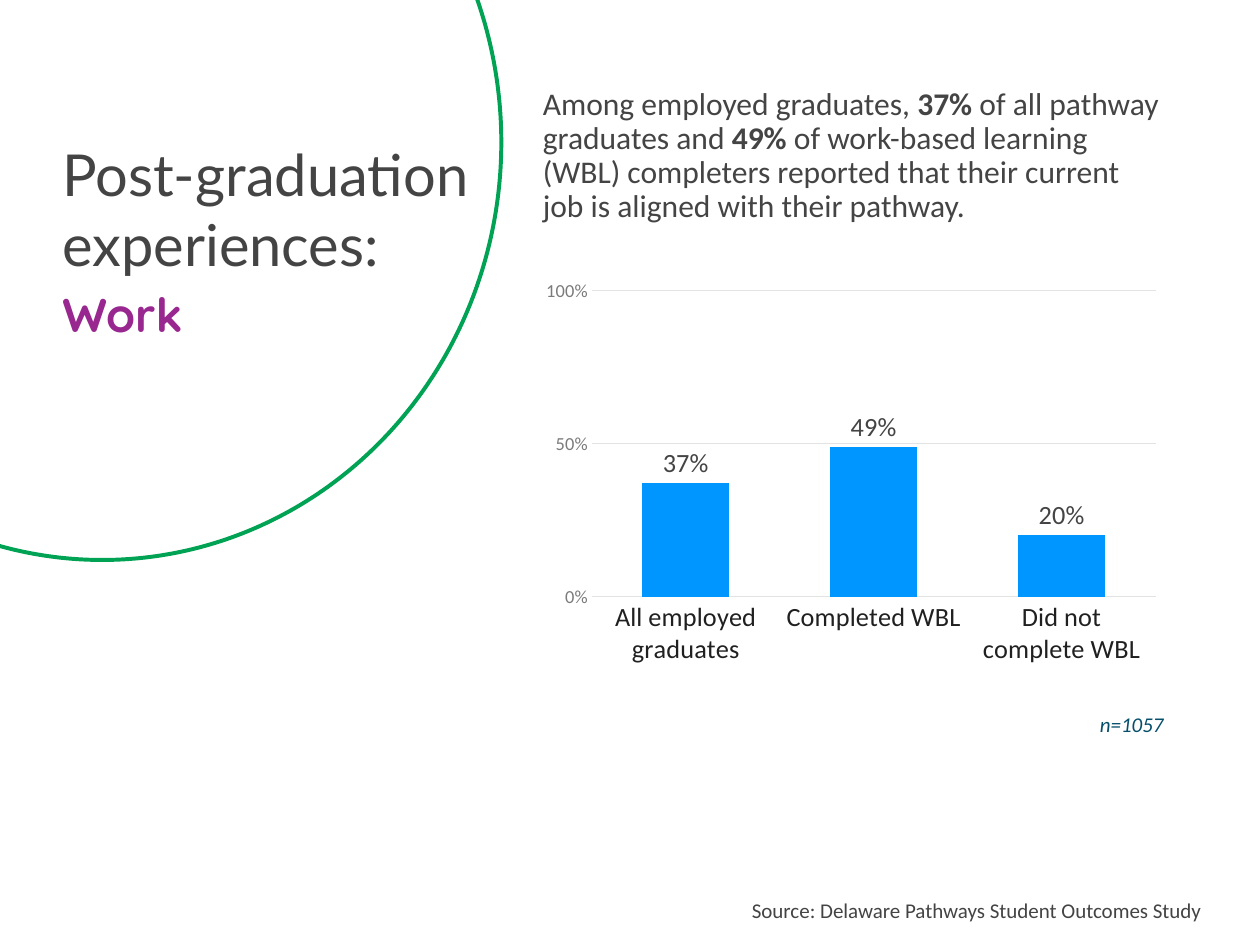
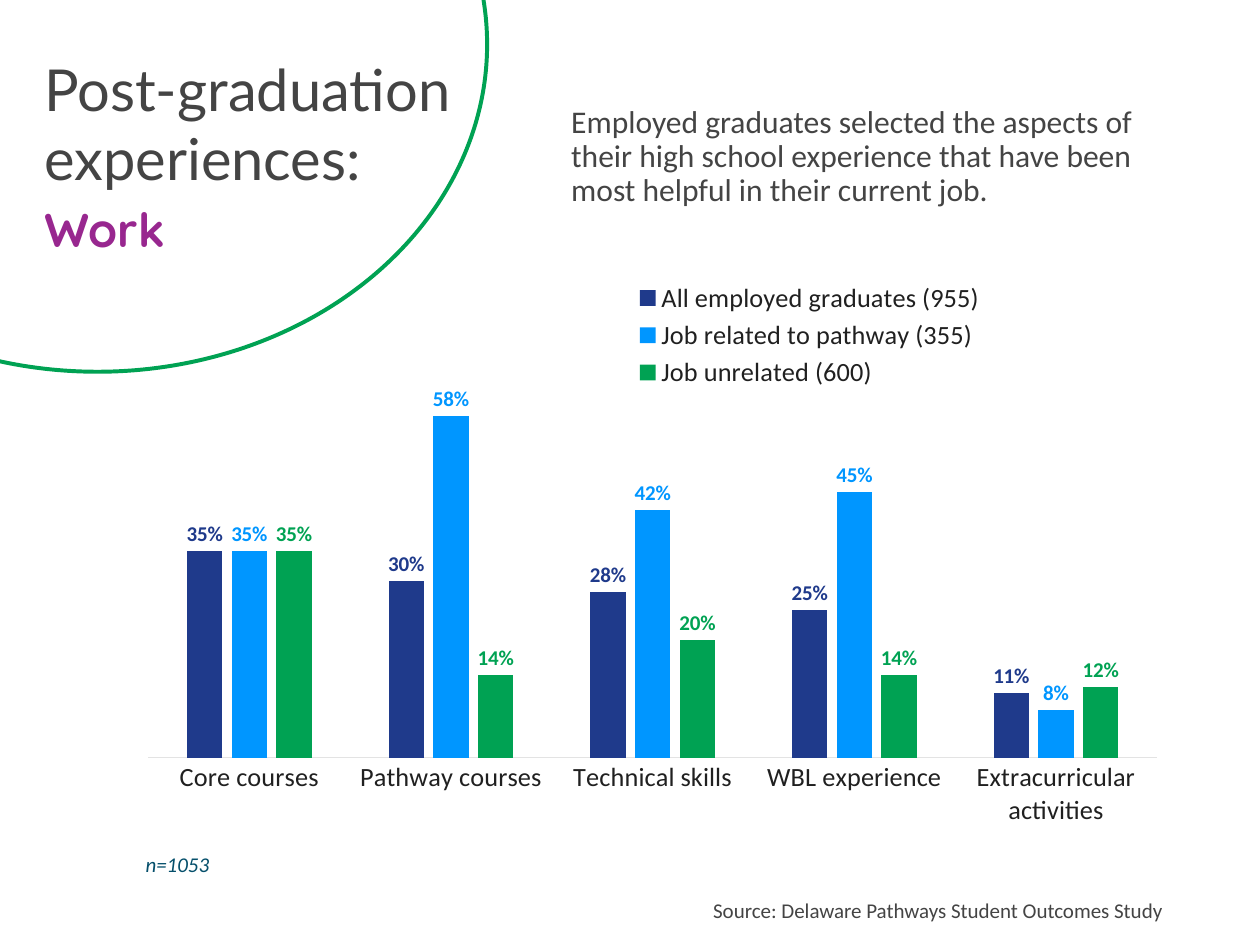
from dataclasses import dataclass
from typing import NamedTuple, Optional

from pptx import Presentation
from pptx.chart.data import CategoryChartData
from pptx.dml.color import RGBColor
from pptx.enum.chart import XL_CHART_TYPE as ChartType
from pptx.enum.chart import XL_LABEL_POSITION as LabelPos
from pptx.enum.chart import XL_LEGEND_POSITION as LegendPos
from pptx.enum.chart import XL_TICK_MARK as TickMark
from pptx.enum.shapes import MSO_SHAPE as Shape
from pptx.oxml import parse_xml
from pptx.oxml.ns import nsdecls
from pptx.util import Emu, Pt

# Shared look: 100 px to the inch
PX = 9144
INK, PURPLE, TEAL = "444444", "98278F", "054F6B"
NAVY, BLUE, GREEN = "1F3A8B", "0096FF", "00A253"
AXIS_TEXT, TICK_TEXT, RULE = "202020", "7B7B7B", "E3E3E3"
BODY, TITLE, ACCENT = "Calibri", "Lato", "Quicksand"
SOURCE = "Source: Delaware Pathways Student Outcomes Study"


class Box(NamedTuple):
    left: int
    top: int
    width: int
    height: int

    def emu(self) -> list[Emu]:
        return [Emu(side * PX) for side in self]


class Run(NamedTuple):
    text: str
    bold: bool = False


@dataclass
class Series:
    name: str
    values: list[float]
    color: str


@dataclass
class BarChart:
    box: Box
    categories: list[str]
    series: list[Series]
    gap: int
    maximum: float
    step: float
    label_size: int
    label_color: Optional[str] = None  # None: the colour of the series
    bold_labels: bool = False
    value_axis: bool = False
    plot: Optional[Box] = None  # measured from the chart's corner
    legend: Optional[Box] = None


@dataclass
class Page:
    circle: Box
    title: Box
    message: Box
    message_runs: list[Run]
    sample: Box
    sample_text: str
    source: Box
    chart: BarChart


def rgb(color: str) -> RGBColor:
    return RGBColor.from_string(color)


def style(font, size: int, color: str, name: str = BODY,
          bold: bool = False, italic: bool = False) -> None:
    font.name, font.size = name, Pt(size)
    font.bold, font.italic = bold, italic
    font.color.rgb = rgb(color)


def add_text(slide, box: Box):
    frame = slide.shapes.add_textbox(*box.emu()).text_frame
    frame.word_wrap = True
    return frame


def write(paragraph, text: str, *, size: int, color: str = INK,
          name: str = BODY, bold: bool = False, italic: bool = False) -> None:
    run = paragraph.add_run()
    run.text = text
    style(run.font, size, color, name, bold, italic)


def draw_title(slide, box: Box) -> None:
    frame = add_text(slide, box)
    topic, subject = frame.paragraphs[0], frame.add_paragraph()
    write(topic, "Post-graduation experiences:", size=44, name=TITLE)
    write(subject, "Work", size=36, color=PURPLE, name=ACCENT, bold=True)
    topic.space_after = subject.space_after = Pt(6)


def draw_circle(slide, box: Box) -> None:
    circle = slide.shapes.add_shape(Shape.OVAL, *box.emu())
    circle.shadow.inherit = False
    circle.fill.background()
    circle.line.color.rgb = rgb(GREEN)
    circle.line.width = Pt(3)


def place(parent, index: int, part: Box, whole: Box, target: str = "") -> None:
    """Fix a chart part's place as fractions of the chart."""
    for old in parent.xpath("c:layout"):
        parent.remove(old)
    sizes = {"x": part.left / whole.width, "y": part.top / whole.height,
             "w": part.width / whole.width, "h": part.height / whole.height}
    inner = f'<c:layoutTarget val="{target}"/>' if target else ""
    modes = "".join(f'<c:{side}Mode val="edge"/>' for side in "xy")
    lengths = "".join(f'<c:{k} val="{v:.4f}"/>' for k, v in sizes.items())
    parent.insert(index, parse_xml(
        f'<c:layout {nsdecls("c")}><c:manualLayout>{inner}{modes}{lengths}'
        '</c:manualLayout></c:layout>'))


def rule(line) -> None:
    line.color.rgb = rgb(RULE)
    line.width = Pt(0.75)


def draw_axes(chart, bars: BarChart) -> None:
    names, scale = chart.category_axis, chart.value_axis
    for axis in (names, scale):
        axis.major_tick_mark = axis.minor_tick_mark = TickMark.NONE
    style(names.tick_labels.font, 20, AXIS_TEXT)
    rule(names.format.line)
    scale.minimum_scale, scale.maximum_scale = 0, bars.maximum
    scale.major_unit = bars.step
    scale.has_major_gridlines = scale.visible = bars.value_axis
    if bars.value_axis:
        rule(scale.major_gridlines.format.line)
        scale.format.line.fill.background()
        style(scale.tick_labels.font, 14, TICK_TEXT)
        scale.tick_labels.number_format = "0%"
        scale.tick_labels.number_format_is_linked = False


def draw_chart(slide, bars: BarChart) -> None:
    data = CategoryChartData(number_format="0%")
    data.categories = bars.categories
    for series in bars.series:
        data.add_series(series.name, series.values)
    chart = slide.shapes.add_chart(
        ChartType.COLUMN_CLUSTERED, *bars.box.emu(), data).chart
    chart.has_title = False
    style(chart.font, 14, INK)
    draw_axes(chart, bars)

    # Columns and their labels
    columns = chart.plots[0]
    columns.gap_width, columns.overlap = bars.gap, -27
    columns.vary_by_categories = False
    for column, series in zip(columns.series, bars.series):
        column.format.fill.solid()
        column.format.fill.fore_color.rgb = rgb(series.color)
        labels = column.data_labels
        labels.show_value = True
        labels.position = LabelPos.OUTSIDE_END
        labels.number_format = "0%"
        labels.number_format_is_linked = False
        style(labels.font, bars.label_size, bars.label_color or series.color,
              bold=bars.bold_labels)

    # Fixed places of plot and legend
    if bars.plot:
        area = chart.element.xpath("c:chart/c:plotArea")[0]
        place(area, 0, bars.plot, bars.box, "inner")
    chart.has_legend = bars.legend is not None
    if bars.legend:
        chart.legend.position = LegendPos.TOP
        chart.legend.include_in_layout = False
        style(chart.legend.font, 20, AXIS_TEXT)
        key = chart.element.xpath("c:chart/c:legend")[0]
        place(key, 1, bars.legend, bars.box)


def draw_page(deck, page: Page) -> None:
    slide = deck.slides.add_slide(deck.slide_layouts[6])
    draw_chart(slide, page.chart)
    message = add_text(slide, page.message).paragraphs[0]
    message.line_spacing = 0.9
    for part in page.message_runs:
        write(message, part.text, size=24, bold=part.bold)
    write(add_text(slide, page.sample).paragraphs[0], page.sample_text,
          size=16, color=TEAL, italic=True)
    draw_circle(slide, page.circle)
    write(add_text(slide, page.source).paragraphs[0], SOURCE, size=16)
    draw_title(slide, page.title)


# Content
JOB_ALIGNMENT = Page(
    circle=Box(-314, -291, 844, 883),
    title=Box(56, 142, 479, 467),
    message=Box(564, 88, 671, 237),
    message_runs=[
        Run("Among employed graduates, "),
        Run("37% ", bold=True),
        Run("of all pathway graduates and "),
        Run("49% ", bold=True),
        Run("of work-based learning (WBL) completers reported that their "
            "current job is aligned with their pathway."),
    ],
    sample=Box(1153, 747, 113, 37),
    sample_text="n=1057",
    source=Box(785, 944, 530, 37),
    chart=BarChart(
        box=Box(564, 287, 671, 425),
        categories=["All employed\ngraduates", "Completed WBL",
                    "Did not complete WBL"],
        series=[Series("Series 1", [0.37, 0.49, 0.2], BLUE)],
        gap=115, maximum=1, step=0.5,
        label_size=20, label_color=INK, value_axis=True,
    ),
)

HELPFUL_ASPECTS = Page(
    circle=Box(-309, -299, 824, 692),
    title=Box(37, 52, 479, 467),
    message=Box(594, 107, 649, 80),
    message_runs=[
        Run("Employed graduates selected the aspects of their high school "
            "experience that have been most helpful in their current job."),
    ],
    sample=Box(144, 895, 93, 38),
    sample_text="n=1053",
    source=Box(744, 944, 571, 37),
    chart=BarChart(
        box=Box(37, 282, 1228, 632),
        categories=["Core courses", "Pathway courses", "Technical skills",
                    "WBL experience", "Extracurricular activities"],
        series=[
            Series("All employed graduates (955)",
                   [0.35, 0.3, 0.28, 0.25, 0.11], NAVY),
            Series("Job related to pathway (355)",
                   [0.35, 0.58, 0.42, 0.45, 0.08], BLUE),
            Series("Job unrelated (600)",
                   [0.35, 0.14, 0.2, 0.14, 0.12], GREEN),
        ],
        gap=219, maximum=0.6, step=0.2,
        label_size=16, bold_labels=True,
        plot=Box(120, 145, 1066, 374),
        legend=Box(629, 11, 380, 123),
    ),
)


def main() -> None:
    deck = Presentation()
    deck.slide_width, deck.slide_height = Emu(1332 * PX), Emu(999 * PX)
    for page in (JOB_ALIGNMENT, HELPFUL_ASPECTS):
        draw_page(deck, page)
    deck.save("out.pptx")


if __name__ == "__main__":
    main()
